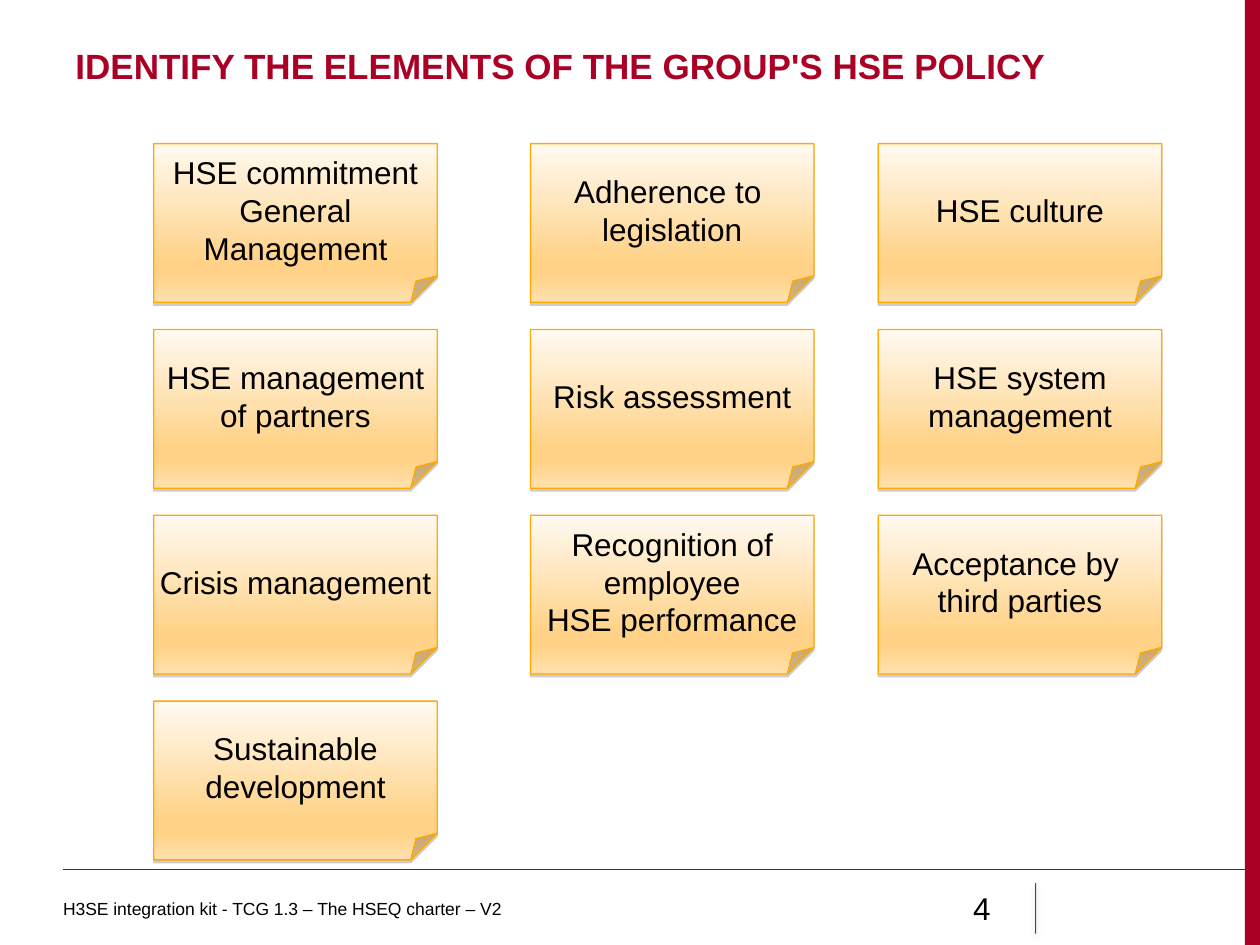
from lxml.etree import SubElement
from pptx import Presentation
from pptx.dml.color import RGBColor
from pptx.enum.shapes import MSO_CONNECTOR, MSO_SHAPE
from pptx.enum.text import MSO_ANCHOR, PP_ALIGN
from pptx.oxml.ns import qn
from pptx.util import Inches, Pt

COLOURS = {
    "accent": "AA0025",
    "text": "000000",
    "note_line": "FFAA00",
    "note_shadow": "808080",
    "note_top": "FFFAF2",
    "note_body": "FFD287",
    "note_bottom": "FFE1AF",
}
NOTE_STOPS = [(0, "note_top"), (74, "note_body"), (83, "note_body"), (100, "note_bottom")]
COLUMN_LEFTS = [1.22, 4.21, 6.97]
FIRST_ROW, ROW_PITCH = 1.14, 1.475
NOTE_WIDTH, NOTE_HEIGHT = 2.25, 1.26

# Each note is a list of paragraphs; "\v" is a line break.
NOTES = [
    [["HSE commitment", "General Management"], ["Adherence to \vlegislation"], ["HSE culture"]],
    [["HSE management", "of partners"], ["Risk assessment"], ["HSE system", "management"]],
    [["Crisis management"], ["Recognition of employee", "HSE performance"],
     ["Acceptance by \vthird parties"]],
    [["Sustainable development"]],
]


def colour(name):
    return RGBColor.from_string(COLOURS[name])


def add_colour(parent, name, opacity=100):
    element = SubElement(parent, qn("a:srgbClr"), val=COLOURS[name])
    if opacity < 100:
        SubElement(element, qn("a:alpha"), val=str(opacity * 1000))


def add_shadow(effects, name, blur, distance):
    """Add a downward shadow to an a:effectLst; blur and distance are in points."""
    shadow = SubElement(effects, qn("a:outerShdw"), blurRad=str(Pt(blur)),
                        dist=str(Pt(distance)), dir="5400000", rotWithShape="0")
    add_colour(shadow, name, 38)


class SlideBuilder:
    font = "Arial"

    def __init__(self, page):
        self.page = page

    def set_text(self, frame, paragraphs, size, align=PP_ALIGN.LEFT, name="text", bold=False):
        frame.word_wrap = True
        for index, text in enumerate(paragraphs):
            para = frame.paragraphs[0] if index == 0 else frame.add_paragraph()
            para.text = text
            para.alignment = align
            para.font.name = self.font
            para.font.size = Pt(size)
            para.font.bold = bold
            para.font.color.rgb = colour(name)

    def text(self, left, top, width, height, text, size, anchor=MSO_ANCHOR.MIDDLE,
             inset=0.1, **style):
        box = self.page.shapes.add_textbox(Inches(left), Inches(top), Inches(width), Inches(height))
        box.text_frame.vertical_anchor = anchor
        box.text_frame.margin_left = Inches(inset)
        self.set_text(box.text_frame, [text], size, **style)

    def bar(self, left, top, width, height, name):
        bar = self.page.shapes.add_shape(
            MSO_SHAPE.RECTANGLE, Inches(left), Inches(top), Inches(width), Inches(height))
        bar.shadow.inherit = False
        bar.fill.solid()
        bar.fill.fore_color.rgb = colour(name)
        bar.line.fill.background()

    def line(self, start, end, name, width, opacity=100, shadow=False):
        line = self.page.shapes.add_connector(
            MSO_CONNECTOR.STRAIGHT, *(Inches(value) for value in (*start, *end)))
        line.line.color.rgb = colour(name)
        line.line.width = Pt(width)
        properties = line._element.spPr
        if opacity < 100:
            fill = properties.find(qn("a:ln")).find(qn("a:solidFill"))
            fill.clear()
            add_colour(fill, name, opacity)
        effects = SubElement(properties, qn("a:effectLst"))
        if shadow:
            add_shadow(effects, "text", 3.1, 1.6)

    def note(self, left, top, paragraphs):
        note = self.page.shapes.add_shape(
            MSO_SHAPE.FOLDED_CORNER, Inches(left), Inches(top),
            Inches(NOTE_WIDTH), Inches(NOTE_HEIGHT))
        note.fill.gradient()
        note.fill.gradient_angle = 270
        properties = note._element.spPr
        stops = properties.find(qn("a:gradFill")).find(qn("a:gsLst"))
        stops.clear()
        for position, name in NOTE_STOPS:
            add_colour(SubElement(stops, qn("a:gs"), pos=str(position * 1000)), name)
        note.line.color.rgb = colour("note_line")
        note.line.width = Pt(0.75)
        note.shadow.inherit = False
        add_shadow(properties.find(qn("a:effectLst")), "note_shadow", 0, 1.6)
        frame = note.text_frame
        frame.vertical_anchor = MSO_ANCHOR.MIDDLE
        frame.margin_left = frame.margin_right = 0
        frame.margin_top = frame.margin_bottom = Inches(0.04)
        self.set_text(frame, paragraphs, 18, PP_ALIGN.CENTER)


def main():
    deck = Presentation()
    deck.slide_width, deck.slide_height = Inches(10), Inches(7.5)
    slide = SlideBuilder(deck.slides.add_slide(deck.slide_layouts[6]))

    slide.bar(9.88, 0, 0.12, 7.5, "accent")
    slide.line((0.5, 6.9), (10, 6.9), "accent", 0.75)
    slide.line((8.22, 7.01), (8.22, 7.41), "text", 0.5, opacity=70, shadow=True)
    slide.text(0.5, 0.3, 8.99, 0.69, "IDENTIFY THE ELEMENTS OF THE GROUP'S HSE POLICY", 20,
               anchor=MSO_ANCHOR.TOP, name="accent", bold=True)

    for row, notes in enumerate(NOTES):
        for left, paragraphs in zip(COLUMN_LEFTS, notes):
            slide.note(left, FIRST_ROW + row * ROW_PITCH, paragraphs)

    slide.text(7.17, 7.01, 0.79, 0.4, "4", 18, align=PP_ALIGN.RIGHT)
    slide.text(0.5, 7.01, 6.08, 0.4, "H3SE integration kit - TCG 1.3 – The HSEQ charter – V2", 10,
               inset=0)
    deck.save("out.pptx")


if __name__ == "__main__":
    main()
